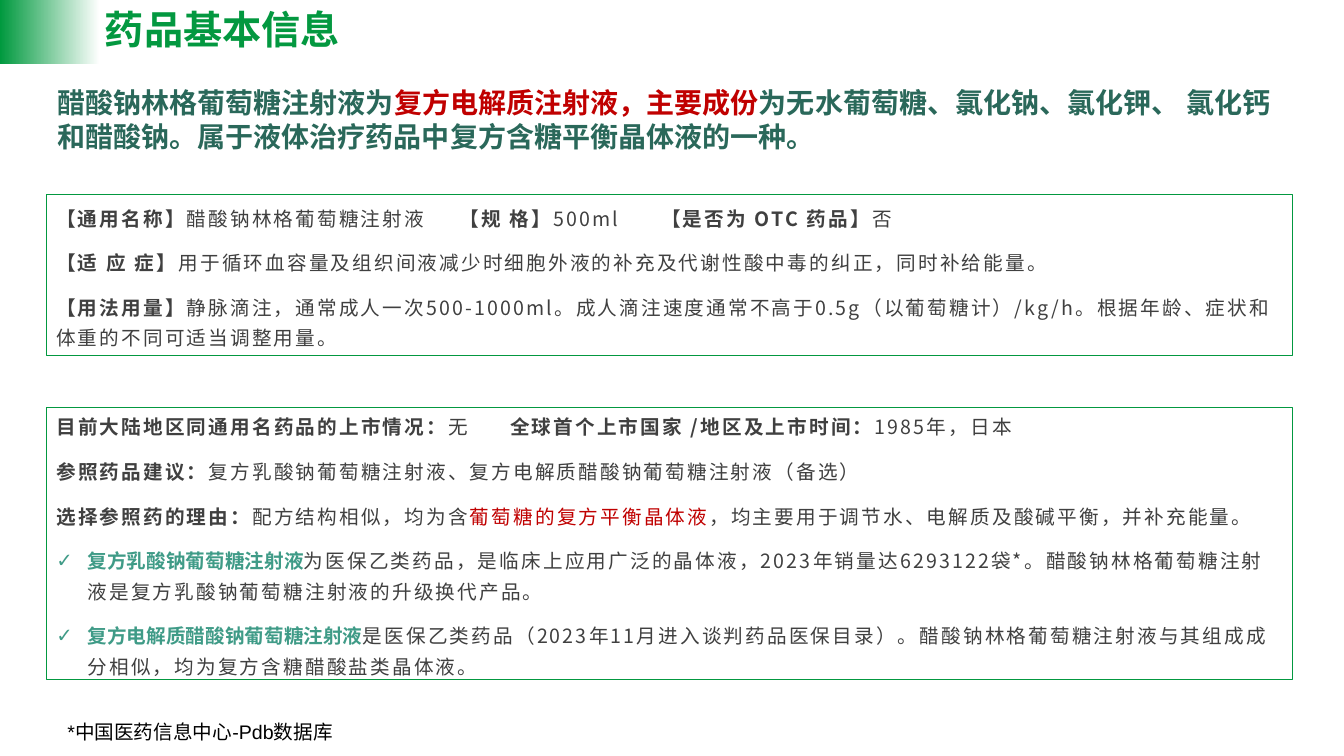
import pptx
import pptx.util
import pptx.dml.color
import pptx.enum.shapes
import pptx.enum.text
import pptx.oxml.ns
from lxml import etree
from pptx.util import Inches

COLORS = {
    "green": "039840",
    "band": "00993E",
    "white": "FFFFFF",
    "text": "404040",
    "red": "C00000",
    "teal": "3F9B87",
    "heading": "2A685A",
    "black": "000000",
}
CJK_FONT = "Noto Sans CJK SC"
BULLET_INDENT = 0.31

LABEL = {"bold": True, "spacing": 1.5}
PLAIN = {"spacing": 1.5}
ACCENT = {"color": "red", "spacing": 1.5}
DRUG = {"color": "teal", "bold": True}

DRUG_FACTS = [
    ([("【通用名称】", LABEL), ("醋酸钠林格葡萄糖注射液\t", PLAIN),
      ("【规\t格】", LABEL), ("500ml\t", PLAIN),
      ("【是否为 OTC 药品】", LABEL), ("否", PLAIN)], {"tabs": [5.17, 6.05, 8.27]}),
    ([("【适\t应 症】", LABEL),
      ("用于循环血容量及组织间液减少时细胞外液的补充及代谢性酸中毒的纠正，同时补给能量。", PLAIN)],
     {"tabs": [0.57]}),
    ([("【用法用量】", LABEL),
      ("静脉滴注，通常成人一次500-1000ml。成人滴注速度通常不高于0.5g（以葡萄糖计）/kg/h。"
       "根据年龄、症状和体重的不同可适当调整用量。", PLAIN)], {}),
]
REFERENCE_FACTS = [
    ([("目前大陆地区同通用名药品的上市情况：", LABEL), ("无\t", PLAIN),
      ("全球首个上市国家 /地区及上市时间：", LABEL), ("1985年，日本", PLAIN)], {"tabs": [5.08]}),
    ([("参照药品建议：", LABEL),
      ("复方乳酸钠葡萄糖注射液、复方电解质醋酸钠葡萄糖注射液（备选）", PLAIN)], {}),
    ([("选择参照药的理由：", LABEL), ("配方结构相似，均为含", PLAIN),
      ("葡萄糖的复方平衡晶体液", ACCENT),
      ("，均主要用于调节水、电解质及酸碱平衡，并补充能量。", PLAIN)], {}),
    ([("复方乳酸钠葡萄糖注射液", DRUG),
      ("为医保乙类药品，是临床上应用广泛的晶体液，2023年销量达6293122袋*。"
       "醋酸钠林格葡萄糖注射液是复方乳酸钠葡萄糖注射液的升级换代产品。", PLAIN)], {"bullet": True}),
    ([("复方电解质醋酸钠葡萄糖注射液", DRUG),
      ("是医保乙类药品（2023年11月进入谈判药品医保目录）。"
       "醋酸钠林格葡萄糖注射液与其组成成分相似，均为复方含糖醋酸盐类晶体液。", PLAIN)], {"bullet": True}),
]


def rgb(name):
    """Return the named palette colour."""
    return pptx.dml.color.RGBColor.from_string(COLORS[name])


def add_element(parent, tag, **attributes):
    """Append a DrawingML element to its parent."""
    return etree.SubElement(parent, pptx.oxml.ns.qn(tag), attributes)


def place(shape, box):
    """Move a shape to a box of left, top, width and height in inches."""
    shape.left, shape.top, shape.width, shape.height = map(Inches, box)


def add_span(para, text, size=14, color="text", bold=False, spacing=0, font=CJK_FONT):
    """Add one formatted run."""
    span = para.add_run()
    span.text = text
    span.font.size = pptx.util.Pt(size)
    span.font.bold = bold
    span.font.color.rgb = rgb(color)
    span.font.name = font
    properties = span._r.get_or_add_rPr()
    properties.set("spc", str(int(spacing * 100)))
    add_element(properties, "a:ea", typeface=CJK_FONT)


def format_para(para, bullet=False, tabs=()):
    """Set the indent, bullet and tab stops of a paragraph."""
    indent = Inches(BULLET_INDENT) if bullet else 0
    properties = para._p.get_or_add_pPr()
    properties.set("marL", str(indent))
    properties.set("indent", str(-indent))
    if bullet:
        add_element(properties, "a:buFont", typeface="Arial")
        add_element(properties, "a:buChar", char="✓")
    else:
        add_element(properties, "a:buNone")
    if tabs:
        stops = add_element(properties, "a:tabLst")
        for position in tabs:
            add_element(stops, "a:tab", pos=str(Inches(position)), algn="l")


def fill_frame(frame, paragraphs, line_spacing=1.0, anchor="TOP"):
    """Write paragraphs of formatted runs into a text frame."""
    frame.word_wrap = True
    frame.auto_size = pptx.enum.text.MSO_AUTO_SIZE.SHAPE_TO_FIT_TEXT
    frame.vertical_anchor = getattr(pptx.enum.text.MSO_ANCHOR, anchor)
    for index, (spans, layout) in enumerate(paragraphs):
        para = frame.add_paragraph() if index else frame.paragraphs[0]
        format_para(para, **layout)
        para.alignment = pptx.enum.text.PP_ALIGN.LEFT
        para.line_spacing = line_spacing
        para.space_before = pptx.util.Pt(10 if index else 0)
        for text, style in spans:
            add_span(para, text, **style)


def add_band(page, box):
    """Draw the gradient band beside the title."""
    band = page.shapes.add_shape(pptx.enum.shapes.MSO_SHAPE.RECTANGLE, *map(Inches, box))
    band.shadow.inherit = False
    band.line.fill.background()
    band.fill.gradient()
    band.fill.gradient_angle = 180
    for stop, name in zip(band.fill.gradient_stops, ("white", "band")):
        stop.color.rgb = rgb(name)


def add_title(page, box):
    """Write the slide title."""
    title = page.shapes.title
    place(title, box)
    style = {"size": 28, "color": "green", "bold": True}
    fill_frame(title.text_frame, [([("药品基本信息", style)], {})], 0.9, "MIDDLE")
    title.text_frame.auto_size = pptx.enum.text.MSO_AUTO_SIZE.NONE


def add_summary(page, box):
    """Write the summary statement."""
    summary = page.shapes.add_textbox(*map(Inches, box))
    style = {"size": 20, "color": "heading", "bold": True}
    spans = [
        ("醋酸钠林格葡萄糖注射液为", style),
        ("复方电解质注射液，主要成份", {**style, "color": "red"}),
        ("为无水葡萄糖、氯化钠、氯化钾、 氯化钙和醋酸钠。属于液体治疗药品中复方含糖平衡晶体液的一种。", style),
    ]
    fill_frame(summary.text_frame, [(spans, {})])


def outline(panel):
    """Give a panel its thin green outline and no fill."""
    panel.fill.background()
    panel.line.color.rgb = rgb("green")
    panel.line.width = pptx.util.Pt(0.75)


def add_drug_panel(page, box):
    """Draw the panel of drug facts."""
    panel = page.shapes.add_shape(pptx.enum.shapes.MSO_SHAPE.RECTANGLE, *map(Inches, box))
    panel.shadow.inherit = False
    outline(panel)
    fill_frame(panel.text_frame, DRUG_FACTS, 1.3)


def add_reference_panel(page, box):
    """Fill the body placeholder with the reference drug list."""
    panel = page.placeholders[1]
    place(panel, box)
    outline(panel)
    fill_frame(panel.text_frame, REFERENCE_FACTS, 1.3, "MIDDLE")


def add_footnote(page, box):
    """Write the data source note."""
    note = page.shapes.add_textbox(*map(Inches, box))
    style = {"color": "black", "font": "Arial"}
    fill_frame(note.text_frame, [([("*中国医药信息中心-Pdb数据库", style)], {})])


def main():
    """Build and save the slide."""
    deck = pptx.Presentation()
    deck.slide_width, deck.slide_height = Inches(13.33), Inches(7.5)
    page = deck.slides.add_slide(deck.slide_layouts[1])
    add_band(page, (0, 0, 0.99, 0.64))
    add_title(page, (0.94, 0, 2.95, 0.63))
    add_summary(page, (0.47, 0.8, 12.35, 0.77))
    add_drug_panel(page, (0.46, 1.93, 12.36, 1.6))
    add_reference_panel(page, (0.46, 3.99, 12.36, 2.8))
    add_footnote(page, (0.57, 7.09, 11.94, 0.34))
    deck.save("out.pptx")


if __name__ == "__main__":
    main()
